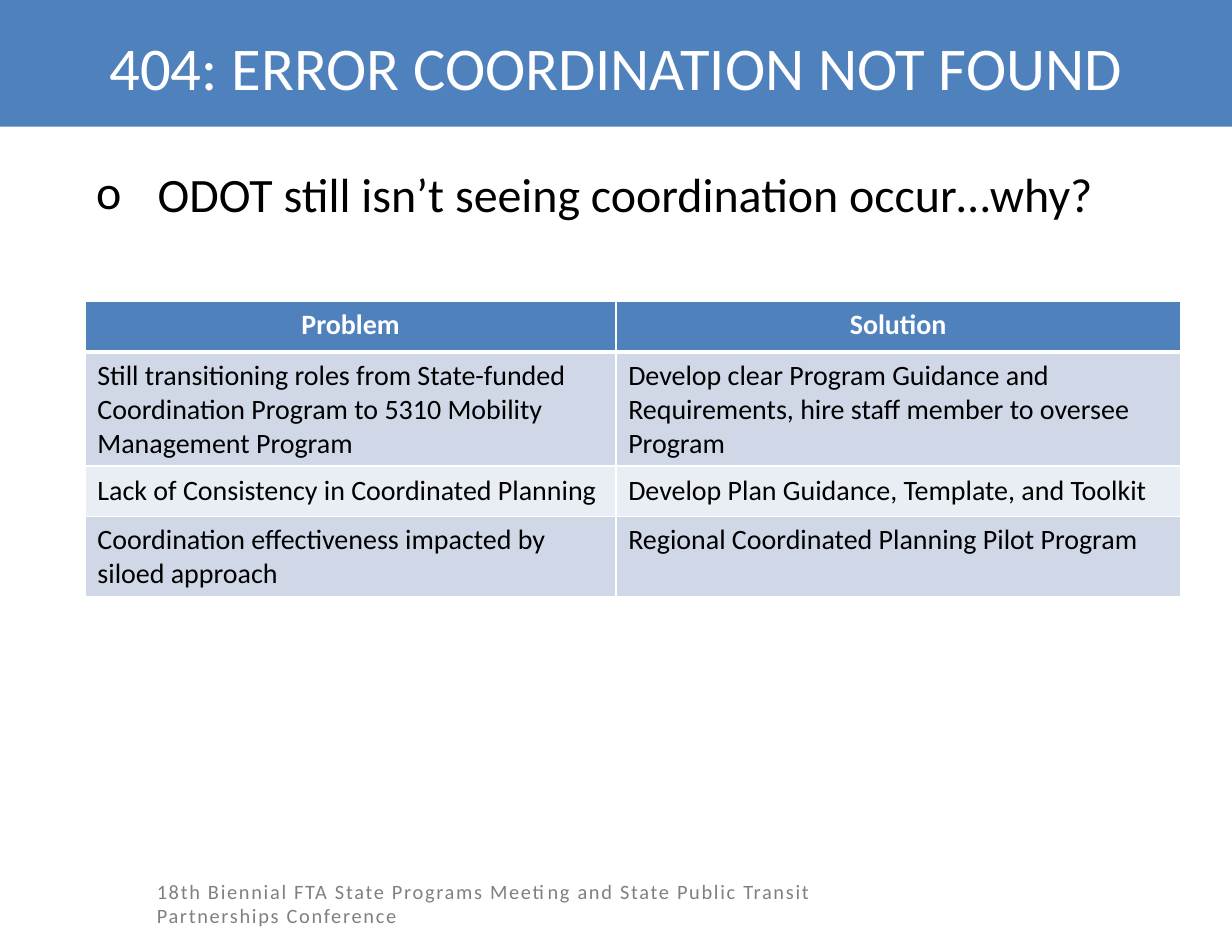
from lxml.etree import SubElement
from pptx import Presentation
from pptx.dml.color import RGBColor
from pptx.enum.text import MSO_ANCHOR, PP_ALIGN
from pptx.oxml.ns import qn
from pptx.util import Inches, Pt

BLUE = RGBColor(0x4F, 0x81, 0xBD)
DARK_BAND = RGBColor(0xD0, 0xD8, 0xE8)
LIGHT_BAND = RGBColor(0xE9, 0xED, 0xF4)
GRAY = RGBColor(0x80, 0x80, 0x80)
BLACK = RGBColor(0, 0, 0)
WHITE = RGBColor(0xFF, 0xFF, 0xFF)
FONT = "Calibri"

ROWS = [
    ("Problem", "Solution"),
    ("Still transitioning roles from State-funded Coordination Program to 5310 Mobility Management Program",
     "Develop clear Program Guidance and Requirements, hire staff member to oversee Program"),
    ("Lack of Consistency in Coordinated Planning",
     "Develop Plan Guidance, Template, and Toolkit"),
    ("Coordination effectiveness impacted by siloed approach",
     "Regional Coordinated Planning Pilot Program"),
]
COLUMN_WIDTHS = [4.74, 5.04]
ROW_HEIGHTS = [0.45, 0.99, 0.45, 0.7]


def place(shape, left, top, width, height):
    shape.left, shape.top = Inches(left), Inches(top)
    shape.width, shape.height = Inches(width), Inches(height)


def set_margins(target, side, top, bottom):
    target.margin_left = target.margin_right = Inches(side)
    target.margin_top, target.margin_bottom = Inches(top), Inches(bottom)


def add_text(para, text, size, color, bold=False):
    span = para.add_run()
    span.text = text
    span.font.name = FONT
    span.font.size = Pt(size)
    span.font.bold = bold
    span.font.color.rgb = color
    return span


def add_title(page, text):
    title = page.shapes.title
    place(title, 0, 0, 11, 1.13)
    title.fill.solid()
    title.fill.fore_color.rgb = BLUE
    frame = title.text_frame
    frame.word_wrap = True
    frame.vertical_anchor = MSO_ANCHOR.MIDDLE
    set_margins(frame, 0.09, 0.1, 0.04)
    para = frame.paragraphs[0]
    para.alignment = PP_ALIGN.CENTER
    add_text(para, text, 39, WHITE)


def add_box(page, left, top, width, height):
    box = page.shapes.add_textbox(*map(Inches, (left, top, width, height)))
    box.text_frame.word_wrap = True
    return box.text_frame


def add_bullet(para, symbol, indent):
    properties = para._p.get_or_add_pPr()
    properties.set("marL", str(Inches(indent)))
    properties.set("indent", str(-Inches(indent)))
    SubElement(properties, qn("a:buFont"), typeface=FONT)
    SubElement(properties, qn("a:buChar"), char=symbol)


def add_border(cell, side, width):
    line = SubElement(cell._tc.get_or_add_tcPr(), qn("a:" + side), w=str(Pt(width)))
    fill = SubElement(line, qn("a:solidFill"))
    SubElement(fill, qn("a:srgbClr"), val=str(WHITE))


def format_cell(cell, text, row):
    header = row == 0
    # Borders come before the fill in the cell properties
    for side in ("lnL", "lnR", "lnT", "lnB"):
        thick = (header and side == "lnB") or (row == 1 and side == "lnT")
        add_border(cell, side, 3 if thick else 1)
    cell.fill.solid()
    cell.fill.fore_color.rgb = BLUE if header else DARK_BAND if row % 2 else LIGHT_BAND
    set_margins(cell, 0.11, 0.06, 0.06)
    cell.vertical_anchor = MSO_ANCHOR.MIDDLE if row == 2 else MSO_ANCHOR.TOP
    para = cell.text_frame.paragraphs[0]
    para.alignment = PP_ALIGN.CENTER if header else PP_ALIGN.LEFT
    add_text(para, text, 18, WHITE if header else BLACK, header)


def add_problem_table(page):
    table = page.shapes.add_table(
        len(ROWS), len(COLUMN_WIDTHS), Inches(0.76), Inches(2.69),
        Inches(sum(COLUMN_WIDTHS)), Inches(sum(ROW_HEIGHTS))).table
    for column, width in zip(table.columns, COLUMN_WIDTHS):
        column.width = Inches(width)
    for row, height in zip(table.rows, ROW_HEIGHTS):
        row.height = Inches(height)
    for row, texts in enumerate(ROWS):
        for column, text in enumerate(texts):
            format_cell(table.cell(row, column), text, row)


def main():
    deck = Presentation()
    deck.slide_width, deck.slide_height = Inches(11), Inches(8.5)
    page = deck.slides.add_slide(deck.slide_layouts[5])

    add_title(page, "404: ERROR COORDINATION NOT FOUND")

    # Opening question
    question = add_box(page, 0.76, 1.42, 9.49, 6.08).paragraphs[0]
    add_bullet(question, "o", 0.55)
    question.space_before = Pt(6)
    add_text(question, "ODOT still isn’t seeing coordination occur…why?", 30.8, BLACK)

    # Footer
    footer = add_box(page, 1.31, 7.84, 6.67, 0.45)
    footer.vertical_anchor = MSO_ANCHOR.MIDDLE
    set_margins(footer, 0.09, 0.04, 0.04)
    span = add_text(
        footer.paragraphs[0],
        "18th Biennial FTA State Programs Meeting and State Public Transit Partnerships Conference",
        13.1, GRAY)
    span.font._element.set("spc", "110")

    add_problem_table(page)
    deck.save("out.pptx")


if __name__ == "__main__":
    main()
